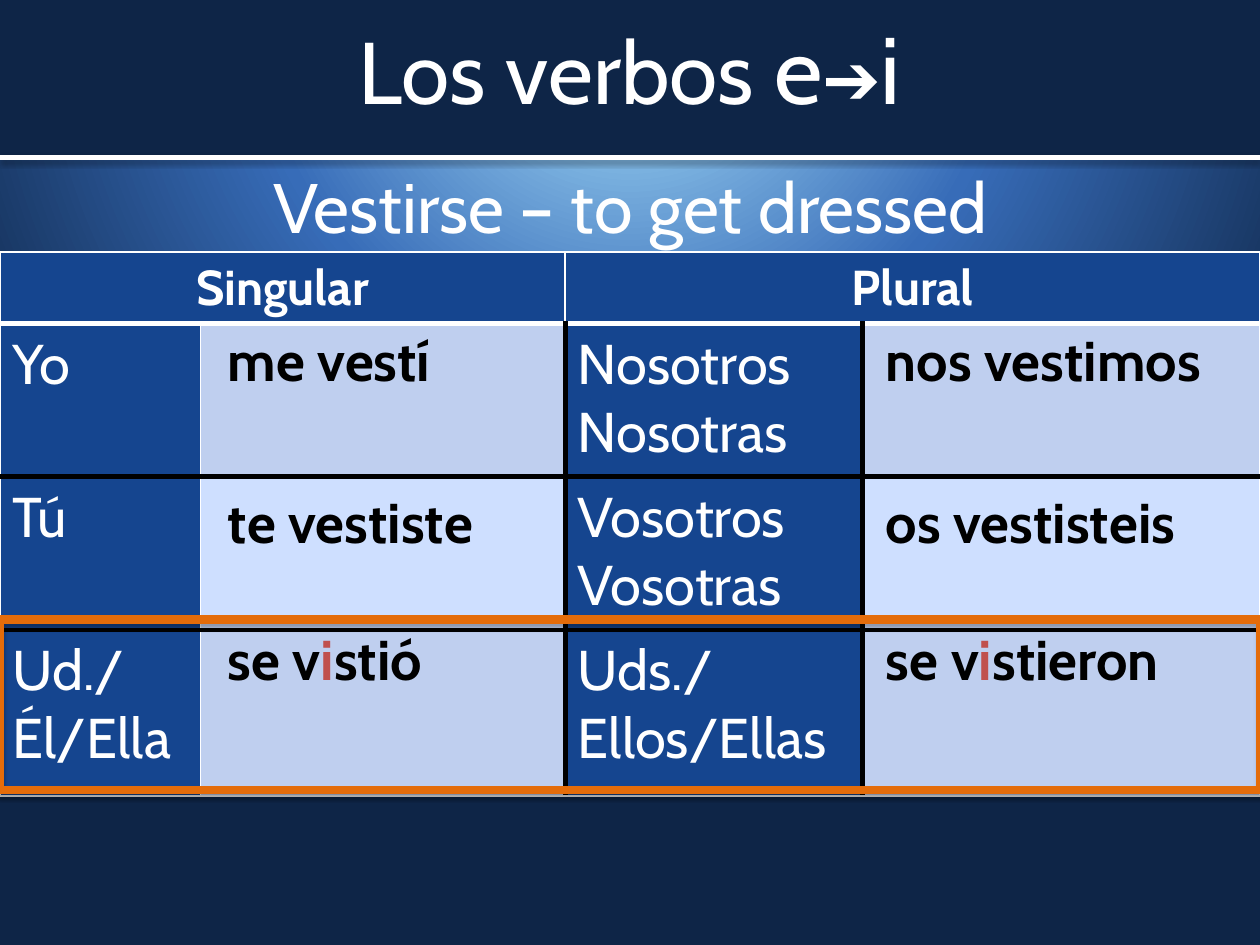
from pptx import Presentation
from pptx.dml.color import RGBColor
from pptx.enum.shapes import MSO_CONNECTOR, MSO_SHAPE
from pptx.enum.text import MSO_ANCHOR, PP_ALIGN
from pptx.oxml import parse_xml
from pptx.oxml.ns import nsdecls
from pptx.util import Pt

CENTER, LEFT = PP_ALIGN.CENTER, PP_ALIGN.LEFT
TOP, MIDDLE = MSO_ANCHOR.TOP, MSO_ANCHOR.MIDDLE
RECTANGLE, STRAIGHT = MSO_SHAPE.RECTANGLE, MSO_CONNECTOR.STRAIGHT

WHITE = RGBColor(0xFF, 0xFF, 0xFF)
BLACK = RGBColor(0, 0, 0)
NAVY = RGBColor(0x0E, 0x25, 0x47)
MID_BLUE = RGBColor(0x37, 0x6C, 0xB8)
SKY = RGBColor(0xB1, 0xE9, 0xFF)
BLUE = RGBColor(0x15, 0x45, 0x8F)
PALE = RGBColor(0xBF, 0xCF, 0xEF)
PALER = RGBColor(0xCE, 0xDF, 0xFF)
RED = RGBColor(0xC0, 0x50, 0x4D)
ORANGE = RGBColor(0xE4, 0x6C, 0x0A)

WIDTH, HEIGHT = 720, 540
NO_STYLE = "{2D5ABB26-0587-4C30-8999-92F81FD0307C}"
THIN, THICK, DARK = (WHITE, 1), (WHITE, 3), (BLACK, 3)


def write_text(frame, paragraphs, size, color=WHITE, bold=False, align=LEFT, font="Cabin"):
    """Fill a frame; each paragraph lists (text, overrides) runs."""
    for index, runs in enumerate(paragraphs):
        paragraph = frame.paragraphs[0] if index == 0 else frame.add_paragraph()
        paragraph.alignment = align
        for text, changes in runs:
            run = paragraph.add_run()
            run.text = text
            run.font.size = Pt(changes.get("size", size))
            run.font.name = changes.get("font", font)
            run.font.bold = bold
            run.font.color.rgb = changes.get("color", color)


def plain(*lines):
    return [[(line, {})] for line in lines]


def add_shadow(shape, opacity, distance):
    shape._element.spPr.append(parse_xml(
        f'<a:effectLst {nsdecls("a")}><a:outerShdw blurRad="{Pt(3.1)}" dist="{Pt(distance)}" '
        f'dir="5400000" rotWithShape="0"><a:srgbClr val="{BLACK}">'
        f'<a:alpha val="{opacity * 1000}"/></a:srgbClr></a:outerShdw></a:effectLst>'))


def set_borders(cell, **edges):
    """Set L, R, T and B edges, each a (color, width) pair, before any fill."""
    for side in "LRTB":
        color, width = edges[side]
        cell._tc.get_or_add_tcPr().append(parse_xml(
            f'<a:ln{side} {nsdecls("a")} w="{Pt(width)}"><a:solidFill>'
            f'<a:srgbClr val="{color}"/></a:solidFill></a:ln{side}>'))


class VerbSlide:
    def __init__(self, deck):
        self.slide = deck.slides.add_slide(deck.slide_layouts[6])
        self.shapes = self.slide.shapes

    def background(self, stops):
        fill = self.slide.background.fill
        fill.solid()
        solid = self.slide._element.cSld.bg.bgPr[0]
        marks = "".join(f'<a:gs pos="{place * 1000}"><a:srgbClr val="{color}"/></a:gs>'
                        for place, color in stops)
        solid.getparent().replace(solid, parse_xml(
            f'<a:gradFill {nsdecls("a")} rotWithShape="1"><a:gsLst>{marks}</a:gsLst>'
            '<a:path path="circle"><a:fillToRect l="50000" t="-80000" r="50000" b="180000"/>'
            '</a:path></a:gradFill>'))

    def rectangle(self, left, top, width, height, fill=None, outline=None):
        box = self.shapes.add_shape(RECTANGLE, Pt(left), Pt(top), Pt(width), Pt(height))
        if fill is None:
            box.fill.background()
        else:
            box.fill.solid()
            box.fill.fore_color.rgb = fill
        if outline is None:
            box.line.fill.background()
            box.shadow.inherit = False
        else:
            box.line.color.rgb, box.line.width = outline[0], Pt(outline[1])
            add_shadow(box, 35, 1.8)

    def rule(self, y, color, width):
        line = self.shapes.add_connector(STRAIGHT, 0, Pt(y), Pt(WIDTH), Pt(y))
        line.line.color.rgb, line.line.width = color, Pt(width)
        add_shadow(line, 38, 1.6)

    def text(self, left, top, width, height, paragraphs, anchor=TOP, **style):
        frame = self.shapes.add_textbox(Pt(left), Pt(top), Pt(width), Pt(height)).text_frame
        frame.word_wrap = True
        frame.vertical_anchor = anchor
        write_text(frame, paragraphs, **style)

    def table(self, left, top, widths, heights):
        table = self.shapes.add_table(len(heights), len(widths), Pt(left), Pt(top),
                                      Pt(sum(widths)), Pt(sum(heights))).table
        table.first_row = table.horz_banding = False
        table._tbl.tblPr[0].text = NO_STYLE
        for column, width in zip(table.columns, widths):
            column.width = Pt(width)
        for row, height in zip(table.rows, heights):
            row.height = Pt(height)
        return table

    def pronoun_table(self, top, widths, heights, headers, pronouns):
        table = self.table(0, top, widths, heights)
        across = [THIN, THICK, DARK, DARK, THIN]
        down = [THIN, THIN, DARK, DARK, THIN]
        for r in range(len(heights)):
            sides = [THIN] * 5 if r == 0 else down
            for c in range(len(widths)):
                cell = table.cell(r, c)
                set_borders(cell, L=sides[c], R=sides[c + 1], T=across[r], B=across[r + 1])
                cell.fill.solid()
                verb_fill = PALE if r % 2 else PALER
                cell.fill.fore_color.rgb = BLUE if r == 0 or c % 2 == 0 else verb_fill
        for c, header in zip((0, 2), headers):
            table.cell(0, c).merge(table.cell(0, c + 1))
            write_text(table.cell(0, c).text_frame, plain(header), 28, bold=True, align=CENTER)
        for r, pair in enumerate(pronouns, start=1):
            for c, lines in zip((0, 2), pair):
                write_text(table.cell(r, c).text_frame, plain(*lines), 32)

    def verb_form(self, left, top, width, runs):
        cell = self.table(left, top, [width], [45.5]).cell(0, 0)
        cell.fill.background()
        write_text(cell.text_frame, [runs], 32, color=BLACK, bold=True)


def stem_change(start, end):
    return [(start, {}), ("i", {"color": RED}), (end, {})]


def main():
    deck = Presentation()
    deck.slide_width, deck.slide_height = Pt(WIDTH), Pt(HEIGHT)
    page = VerbSlide(deck)
    page.background([(0, SKY), (48, MID_BLUE), (100, NAVY)])

    title_height = 90
    page.rectangle(0, 0, WIDTH, title_height, fill=NAVY)
    page.text(0, title_height, WIDTH, 374.4, plain("Vestirse – to get dressed"),
              size=40, align=CENTER)
    page.rule(title_height, WHITE, 3)
    title = [("Los verbos ", {}), ("e", {"size": 54}),
             ("➔", {"size": 40, "font": "Arial"}), ("i", {"size": 54})]
    page.text(0, 0, WIDTH, 76.3, [title], anchor=MIDDLE, size=50, align=CENTER)

    page.pronoun_table(
        144, [114.5, 208.5, 170, 227], [41, 87.5, 87.5, 95], ["Singular", "Plural"],
        [(["Yo"], ["Nosotros", "Nosotras"]),
         (["Tú"], ["Vosotros", "Vosotras"]),
         (["Ud./Él/Ella"], ["Uds./Ellos/Ellas"])])

    row_tops = [183.6, 275.8, 354.2]
    verb_columns = [
        (123, [177, 168.5, 177],
         [[("me vestí", {})], [("te vestiste", {})], stem_change("se v", "stió")]),
        (499, [203, 181.5, 221],
         [[("nos vestimos", {})], [("os vestisteis", {})], stem_change("se v", "stieron")]),
    ]
    for left, widths, forms in verb_columns:
        for top, width, runs in zip(row_tops, widths, forms):
            page.verb_form(left, top, width, runs)

    page.rectangle(0, row_tops[-1], WIDTH, 97.2, outline=(ORANGE, 5))
    deck.save("out.pptx")


if __name__ == "__main__":
    main()
